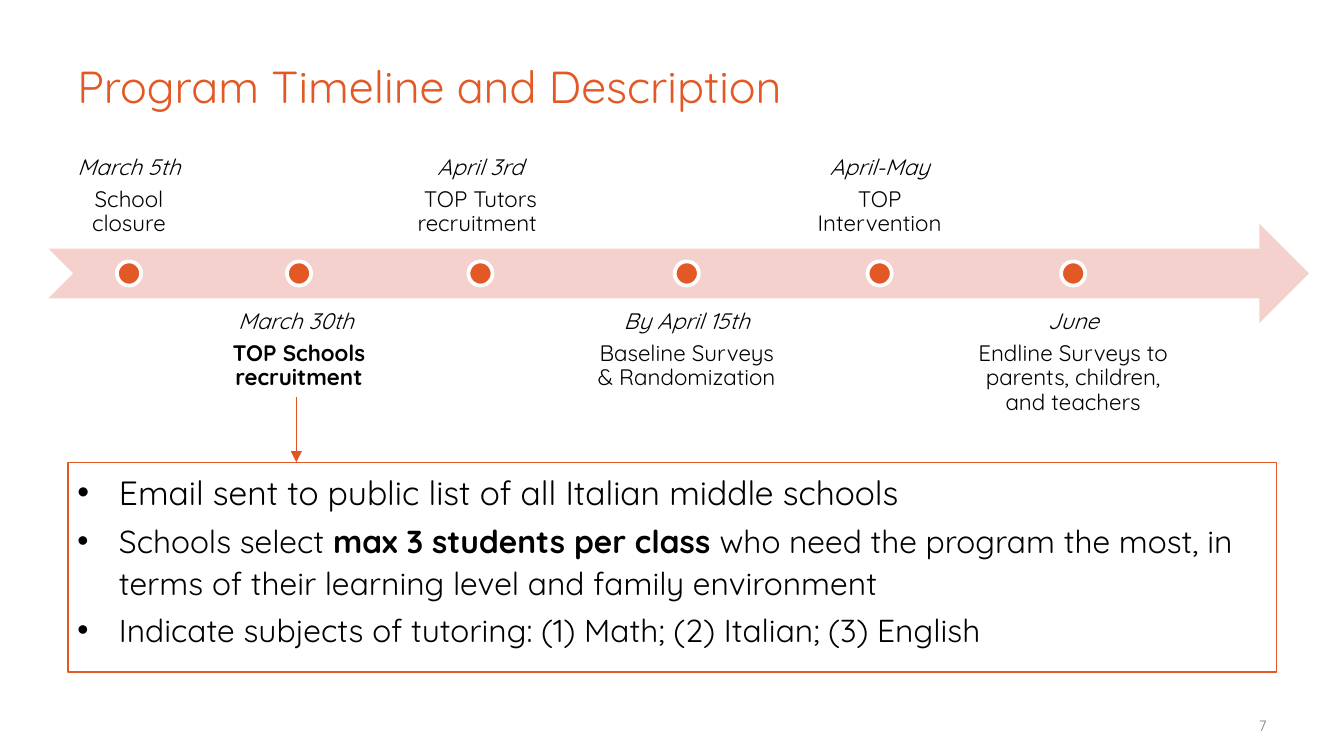
import pptx
import pptx.dml.color
import pptx.enum.shapes
import pptx.enum.text
import pptx.oxml
import pptx.oxml.ns
import pptx.util
import lxml.etree

PX = 4572  # 200 px to the inch
FONT = "Quicksand"
COLORS = {
    "accent": "E35925",
    "pointer": "E35520",
    "band": "F4D1CD",
    "text": "000000",
    "muted": "7F7F7F",
    "white": "FFFFFF",
}
SHAPE = pptx.enum.shapes.MSO_SHAPE
ANCHOR = pptx.enum.text.MSO_ANCHOR
ALIGN = pptx.enum.text.PP_ALIGN
qn = pptx.oxml.ns.qn


def rgb(name):
    return pptx.dml.color.RGBColor.from_string(COLORS[name])


def add_paragraph(frame, spans, size, color="text", align=ALIGN.LEFT):
    """Fill the frame's empty first paragraph or append one; spans are (text, bold)."""
    para = frame.paragraphs[0]
    if para.runs:
        para = frame.add_paragraph()
    para.alignment = align
    para.font.name = FONT
    para.font.size = pptx.util.Pt(size)
    para.font.color.rgb = rgb(color)
    for text, bold in spans:
        span = para.add_run()
        span.text = text
        if bold:
            span.font.bold = True
    return para


deck = pptx.Presentation()
deck.slide_width = 2000 * PX
deck.slide_height = 1125 * PX
slide = deck.slides.add_slide(deck.slide_layouts[6])
shapes = slide.shapes

# Title and page number
for text, area, size, color, align, anchor in [
    ("Program Timeline and Description", (101, 32, 1800, 190), 24, "accent", ALIGN.LEFT, ANCHOR.MIDDLE),
    ("7", (1713, 1058, 186, 36), 8, "muted", ALIGN.RIGHT, ANCHOR.TOP),
]:
    box = shapes.add_textbox(*(value * PX for value in area))
    frame = box.text_frame
    frame.word_wrap = True
    frame.vertical_anchor = anchor
    frame.margin_left = frame.margin_right = 14 * PX
    frame.margin_top = frame.margin_bottom = 8 * PX
    add_paragraph(frame, [(text, False)], size, color, align)

# Details of the school recruitment
details = shapes.add_shape(SHAPE.RECTANGLE, 101 * PX, 688 * PX, 1799 * PX, 312 * PX)
details.shadow.inherit = False
details.fill.background()
details.line.color.rgb = rgb("accent")
details.line.width = pptx.util.Pt(0.75)
frame = details.text_frame
frame.word_wrap = True
frame.vertical_anchor = ANCHOR.TOP
frame.margin_left = frame.margin_right = 14 * PX
frame.margin_top = frame.margin_bottom = 8 * PX
for size, spans in [
    (18, [("Email sent to public list of all Italian middle schools", False)]),
    (17, [
        ("Schools select ", False),
        ("max 3 students per class ", True),
        ("who need the program the most, in terms of their learning level and family environment", False),
    ]),
    (17, [("Indicate subjects of tutoring: (1) Math; (2) Italian; (3) English", False)]),
]:
    para = add_paragraph(frame, spans, size)
    para.line_spacing = 1.1
    para.space_before = pptx.util.Pt(3)
    properties = para._p.get_or_add_pPr()
    properties.set("marL", str(62 * PX))
    properties.set("indent", str(-62 * PX))
    bullet_font = pptx.oxml.parse_xml(
        f'<a:buFont {pptx.oxml.ns.nsdecls("a")} typeface="Arial"/>')
    bullet = pptx.oxml.parse_xml(
        f'<a:buChar {pptx.oxml.ns.nsdecls("a")} char="•"/>')
    defaults = properties.find(qn("a:defRPr"))
    defaults.addprevious(bullet_font)
    defaults.addprevious(bullet)

# Pointer from the recruitment milestone to its details
pointer = shapes.add_connector(
    pptx.enum.shapes.MSO_CONNECTOR.STRAIGHT, 441 * PX, 591 * PX, 441 * PX, 688 * PX)
pointer.line.color.rgb = rgb("pointer")
pointer.line.width = pptx.util.Pt(0.75)
lxml.etree.SubElement(pointer.line._get_or_add_ln(), qn("a:tailEnd"), type="triangle")
lxml.etree.SubElement(pointer._element.spPr, qn("a:effectLst"))

# Timeline
band = shapes.add_shape(SHAPE.NOTCHED_RIGHT_ARROW, 72 * PX, 333 * PX, 1876 * PX, 148 * PX)
band.shadow.inherit = False
band.fill.solid()
band.fill.fore_color.rgb = rgb("band")
band.line.fill.background()

# Date, event, label left, label width, dot left; labels alternate above and below
milestones = [
    ("March 5th", "School closure", 73, 238, 174),
    ("March 30th ", "TOP Schools recruitment", 322, 246, 427),
    ("April 3rd", "TOP Tutors recruitment ", 579, 272, 697),
    ("By April 15th", "Baseline Surveys & Randomization", 861, 322, 1004),
    ("April-May", "TOP Intervention", 1194, 230, 1291),
    ("June", "Endline Surveys to parents, children, and teachers", 1435, 324, 1579),
]
for index, (date, event, left, width, dot_left) in enumerate(milestones):
    above = index % 2 == 0
    top = 222 if above else 444
    label = shapes.add_textbox(left * PX, top * PX, width * PX, 148 * PX)
    frame = label.text_frame
    frame.word_wrap = True
    frame.vertical_anchor = ANCHOR.BOTTOM if above else ANCHOR.TOP
    frame.margin_left = frame.margin_right = 18 * PX
    frame.margin_top = frame.margin_bottom = 18 * PX
    date_para = add_paragraph(frame, [(date, False)], 12, align=ALIGN.CENTER)
    date_para.runs[0].font.italic = True
    date_para.line_spacing = 0.9
    date_para.space_after = pptx.util.Pt(4.2)
    highlighted = event == "TOP Schools recruitment"
    event_para = add_paragraph(frame, [(event, highlighted)], 12, align=ALIGN.CENTER)
    event_para.line_spacing = 0.9

    dot = shapes.add_shape(SHAPE.OVAL, dot_left * PX, 389 * PX, 36 * PX, 36 * PX)
    dot.shadow.inherit = False
    dot.fill.solid()
    dot.fill.fore_color.rgb = rgb("accent")
    dot.line.color.rgb = rgb("white")
    dot.line.width = pptx.util.Pt(2)

deck.save("out.pptx")
